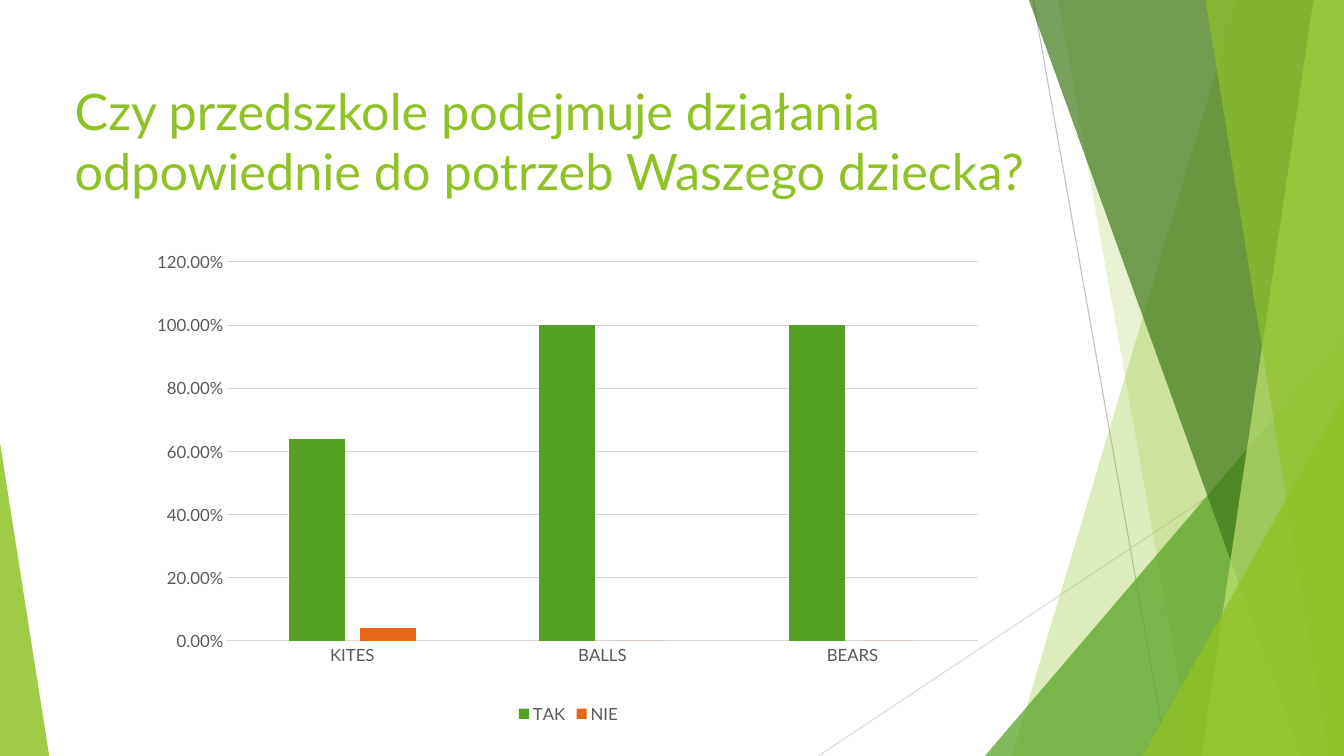
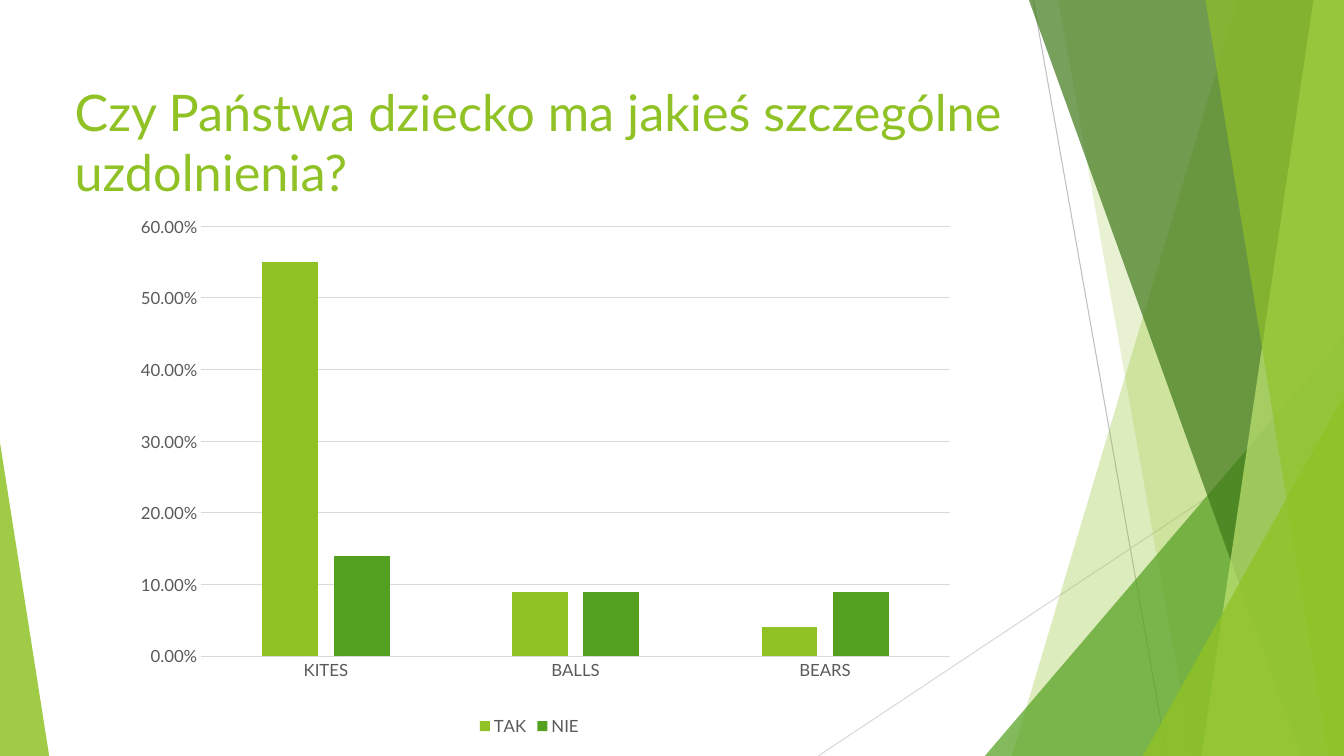
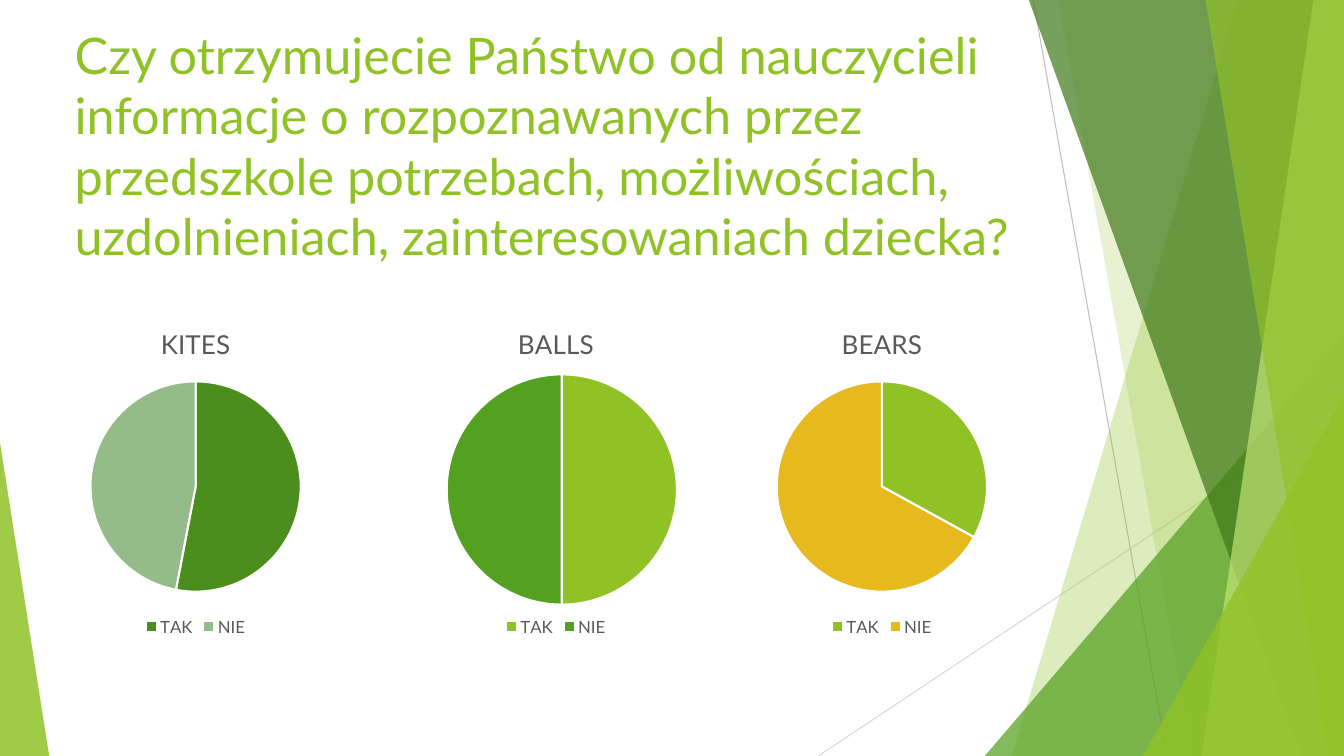
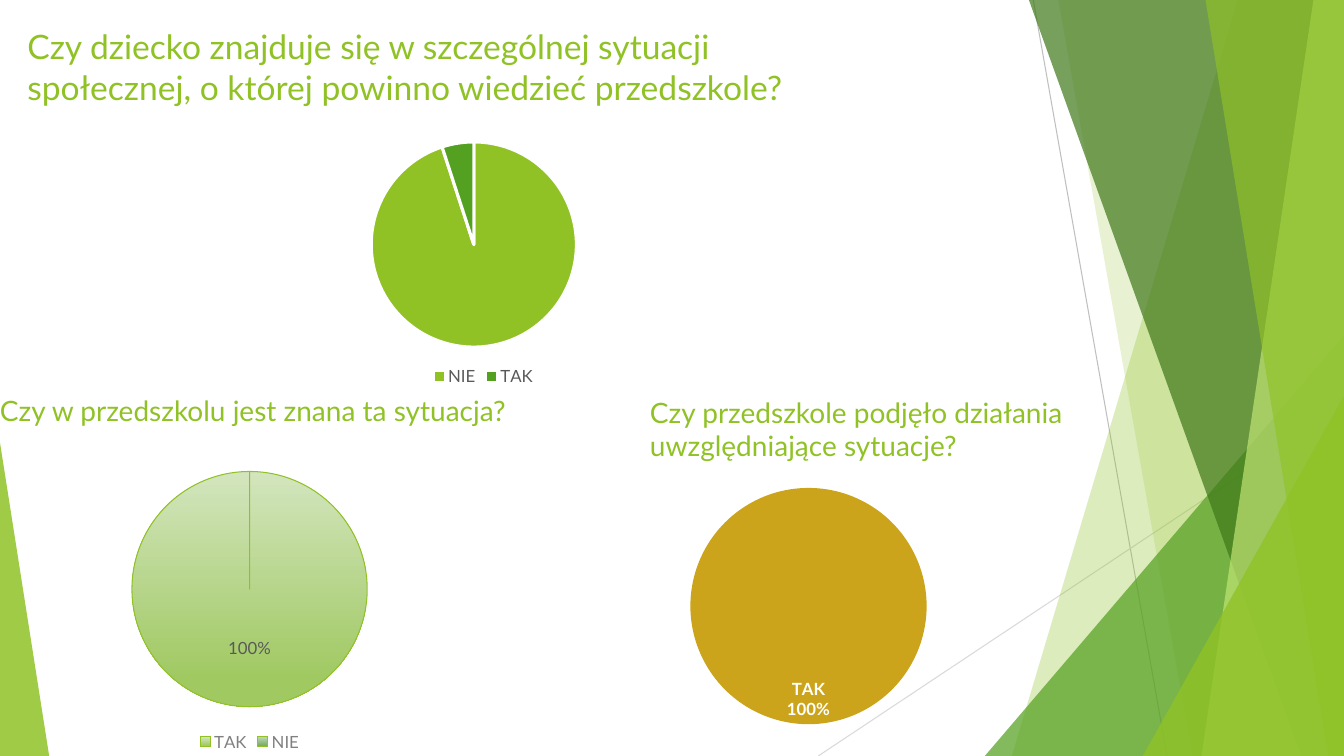
from dataclasses import dataclass
from typing import Optional, Union

import lxml.etree
import pptx
import pptx.chart.chart
import pptx.chart.data
import pptx.dml.color
import pptx.dml.fill
import pptx.enum.chart
import pptx.enum.shapes
import pptx.enum.text
import pptx.oxml.ns
import pptx.slide
import pptx.text.text
import pptx.util

Cm = pptx.util.Cm
Pt = pptx.util.Pt
qn = pptx.oxml.ns.qn

FONT = "Lato"
WIDTH, HEIGHT = 33.87, 19.05
COLORS = {
    "lime": "90C226",
    "green": "54A021",
    "forest": "3F7819",
    "pale_lime": "C0E474",
    "orange": "E76618",
    "leaf": "4B8E1D",
    "sage": "95BC88",
    "gold": "E6B91E",
    "dark_gold": "CCA41B",
    "pale_gold": "ECCC88",
    "lime_top": "D3E5BE",
    "lime_bottom": "A0C962",
    "green_top": "C0D6B9",
    "green_bottom": "76AD61",
    "text": "595959",
    "mid_gray": "808080",
    "line": "BFBFBF",
    "grid": "D9D9D9",
    "white": "FFFFFF",
}


@dataclass(frozen=True)
class Box:
    left: float
    top: float
    width: float
    height: float

    def lengths(self) -> tuple:
        return Cm(self.left), Cm(self.top), Cm(self.width), Cm(self.height)


@dataclass(frozen=True)
class Wedge:
    """Full-height band from a slanted left edge to the right slide edge."""
    top_x: float
    bottom_x: float
    color: str
    opacity: int


@dataclass(frozen=True)
class Peak:
    """Triangle whose apex sits at the given share of its width."""
    box: Box
    apex: float
    color: str
    opacity: int


@dataclass(frozen=True)
class Ray:
    x1: float
    y1: float
    x2: float
    y2: float
    color: str


@dataclass(frozen=True)
class Columns:
    title: str
    title_box: Box
    box: Box
    plot: tuple
    series: tuple  # (name, values, colour)
    top: float
    step: float


@dataclass(frozen=True)
class Pie:
    box: Box
    cats: tuple
    values: tuple
    fills: tuple  # a colour, or a (top, bottom) pair for a gradient
    name: str = "Series 1"
    title: bool = False
    plot: Optional[tuple] = None
    edge: Optional[str] = "white"
    edge_pt: float = 1.5
    legend: Optional[str] = "text"
    label: Optional[str] = None
    label_cat: bool = False


# Shared decoration, back to front
DECOR: tuple = (
    Ray(26.04, 0, 29.41, HEIGHT, "line"),
    Ray(WIDTH, 10.24, 20.62, HEIGHT, "grid"),
    Wedge(31.19, 25.5, "lime", 30),
    Wedge(26.67, 30.05, "lime", 20),
    Peak(Box(24.82, 8.46, 9.05, 10.59), 1, "green", 72),
    Wedge(25.93, 32.79, "forest", 70),
    Wedge(33.1, 30.28, "pale_lime", 70),
    Wedge(30.38, 33.48, "lime", 65),
    Peak(Box(28.8, 9.98, 5.07, 9.07), 1, "lime", 80),
    Peak(Box(0, 11.15, 1.24, 7.9), 0, "lime", 85),
)

# Slide content
GROUPS = ("KITES", "BALLS", "BEARS")
YES_NO = ("TAK", "NIE")

COLUMN_SLIDES = (
    Columns(
        "Czy przedszkole podejmuje działania odpowiednie do potrzeb Waszego dziecka?",
        Box(1.88, 1.7, 24.89, 3.66), Box(3.58, 5.44, 21.49, 12.9),
        (0.1, 0.09, 0.88, 0.74),
        (("TAK", (0.64, 1, 1), "green"), ("NIE", (0.04, 0, 0), "orange")),
        1.2, 0.2),
    Columns(
        "Czy Państwa dziecko ma jakieś szczególne uzdolnienia?",
        Box(1.88, 1.7, 24.56, 3.73), Box(2.74, 5.44, 21.21, 13.21),
        (0.11, 0.02, 0.89, 0.82),
        (("TAK", (0.55, 0.09, 0.04), "lime"), ("NIE", (0.14, 0.09, 0.09), "green")),
        0.6, 0.1),
)

GROUP_PIES = (
    Pie(Box(0.28, 7.77, 9.3, 8.38), YES_NO, (53, 47), ("leaf", "sage"), "KITES", True),
    Pie(Box(10.29, 7.77, 7.44, 8.38), YES_NO, (50, 50), ("lime", "green"), "BALLS", True,
        plot=(0.13, 0.19, 0.78, 0.71)),
    Pie(Box(17.73, 7.77, 8.99, 8.38), YES_NO, (33, 67), ("lime", "gold"), "BEARS", True),
)

SITUATION_PIES = (
    Pie(Box(7.32, 2.11, 9.73, 7.72), ("NIE", "TAK"), (95, 5), ("lime", "green"),
        plot=(0.01, 0.19, 0.93, 0.67), edge_pt=2.25),
    Pie(Box(2.57, 11.53, 7.44, 7.52), YES_NO, (100, 0),
        (("lime_top", "lime_bottom"), ("green_top", "green_bottom")),
        edge="lime", edge_pt=0.75, legend="mid_gray", label="text"),
    Pie(Box(16.76, 11.1, 7.09, 7.52), YES_NO, (100, 0), ("dark_gold", "pale_gold"),
        plot=(0.09, 0.16, 0.84, 0.89), edge=None, legend=None,
        label="white", label_cat=True),
)


def rgb(name: str) -> pptx.dml.color.RGBColor:
    return pptx.dml.color.RGBColor.from_string(COLORS[name])


def set_font(font: pptx.text.text.Font, size: float, color: str) -> None:
    font.name = FONT
    font.size = Pt(size)
    font.color.rgb = rgb(color)


def set_fill(fill: pptx.dml.fill.FillFormat, color: str) -> None:
    fill.solid()
    fill.fore_color.rgb = rgb(color)


# Decoration
def draw_decor(slide: pptx.slide.Slide, item: Union[Ray, Wedge, Peak]):
    if isinstance(item, Ray):
        cn = slide.shapes.add_connector(
            pptx.enum.shapes.MSO_CONNECTOR.STRAIGHT,
            Cm(item.x1), Cm(item.y1), Cm(item.x2), Cm(item.y2))
        cn.line.color.rgb = rgb(item.color)
        cn.line.width = Pt(0.75)
        lxml.etree.SubElement(cn.element.spPr, qn("a:effectLst"))
        return cn
    if isinstance(item, Wedge):
        builder = slide.shapes.build_freeform(Cm(item.top_x), 0)
        builder.add_line_segments([
            (Cm(WIDTH), 0), (Cm(WIDTH), Cm(HEIGHT)), (Cm(item.bottom_x), Cm(HEIGHT))])
        sp = builder.convert_to_shape()
    else:
        sp = slide.shapes.add_shape(
            pptx.enum.shapes.MSO_SHAPE.ISOSCELES_TRIANGLE, *item.box.lengths())
        sp.adjustments[0] = item.apex
    sp.shadow.inherit = False
    sp.line.fill.background()
    set_fill(sp.fill, item.color)
    clr = sp.element.xpath("./p:spPr/a:solidFill/a:srgbClr")[0]
    lxml.etree.SubElement(clr, qn("a:alpha")).set("val", str(item.opacity * 1000))
    return sp


def decorate_layout(layout: pptx.slide.SlideLayout, slide: pptx.slide.Slide) -> None:
    """Draw the decoration once and move it to the layout, behind its placeholders."""
    for i, item in enumerate(DECOR):
        layout.shapes.element.insert(2 + i, draw_decor(slide, item).element)


# Text
def set_title(slide: pptx.slide.Slide, text: str, box: Box, size: float = 36) -> None:
    sp = slide.shapes.title
    sp.left, sp.top, sp.width, sp.height = box.lengths()
    tf = sp.text_frame
    tf.margin_left = tf.margin_right = tf.margin_top = tf.margin_bottom = 0
    tf.auto_size = pptx.enum.text.MSO_AUTO_SIZE.NONE
    tf.vertical_anchor = pptx.enum.text.MSO_ANCHOR.MIDDLE
    write(tf, text, size)


def write(tf: pptx.text.text.TextFrame, text: str, size: float) -> None:
    tf.word_wrap = True
    p = tf.paragraphs[0]
    p.text = text
    p.alignment = pptx.enum.text.PP_ALIGN.LEFT
    set_font(p.font, size, "lime")


def add_question(slide: pptx.slide.Slide, text: str, box: Box, inset: bool) -> None:
    tf = slide.shapes.add_textbox(*box.lengths()).text_frame
    if not inset:
        tf.margin_left = tf.margin_right = tf.margin_top = tf.margin_bottom = 0
    write(tf, text, 20)


# Charts
def set_plot_layout(chart: pptx.chart.chart.Chart, plot: tuple) -> None:
    area = chart.element.xpath("c:chart/c:plotArea")[0]
    for old in area.findall(qn("c:layout")):
        area.remove(old)
    layout = lxml.etree.Element(qn("c:layout"))
    manual = lxml.etree.SubElement(layout, qn("c:manualLayout"))
    settings = [("layoutTarget", "inner"), ("xMode", "edge"), ("yMode", "edge"),
                *zip("xywh", plot)]
    for tag, val in settings:
        lxml.etree.SubElement(manual, qn(f"c:{tag}")).set("val", str(val))
    area.insert(0, layout)


def add_chart(slide: pptx.slide.Slide, kind: pptx.enum.chart.XL_CHART_TYPE, box: Box,
              cats: tuple, series: list, plot: Optional[tuple],
              legend: Optional[str], number_format: str) -> pptx.chart.chart.Chart:
    data = pptx.chart.data.CategoryChartData(number_format=number_format)
    data.categories = cats
    for name, values in series:
        data.add_series(name, values)
    chart = slide.shapes.add_chart(kind, *box.lengths(), data).chart
    set_font(chart.font, 12, "text")
    chart.has_title = False
    chart.has_legend = legend is not None
    if legend:
        chart.legend.position = pptx.enum.chart.XL_LEGEND_POSITION.BOTTOM
        chart.legend.include_in_layout = False
        set_font(chart.legend.font, 12, legend)
    if plot:
        set_plot_layout(chart, plot)
    # Transparent chart area without a frame
    sp_pr = lxml.etree.Element(qn("c:spPr"))
    lxml.etree.SubElement(sp_pr, qn("a:noFill"))
    lxml.etree.SubElement(lxml.etree.SubElement(sp_pr, qn("a:ln")), qn("a:noFill"))
    chart.element.xpath("c:chart")[0].addnext(sp_pr)
    return chart


def add_columns(slide: pptx.slide.Slide, spec: Columns) -> None:
    chart = add_chart(
        slide, pptx.enum.chart.XL_CHART_TYPE.COLUMN_CLUSTERED, spec.box, GROUPS,
        [(name, values) for name, values, _ in spec.series], spec.plot, "text", "0%")
    plot = chart.plots[0]
    plot.vary_by_categories = False
    plot.gap_width, plot.overlap = 219, -27
    for ser, (_, _, color) in zip(plot.series, spec.series):
        set_fill(ser.format.fill, color)

    for axis in (chart.category_axis, chart.value_axis):
        axis.major_tick_mark = axis.minor_tick_mark = pptx.enum.chart.XL_TICK_MARK.NONE
        set_font(axis.tick_labels.font, 12, "text")
    val_axis = chart.value_axis
    val_axis.minimum_scale, val_axis.maximum_scale = 0, spec.top
    val_axis.major_unit = spec.step
    val_axis.tick_labels.number_format = "0.00%"
    val_axis.tick_labels.number_format_is_linked = False
    val_axis.format.line.fill.background()
    for line in (chart.category_axis.format.line, val_axis.major_gridlines.format.line):
        line.color.rgb = rgb("grid")
        line.width = Pt(0.75)


def add_pie(slide: pptx.slide.Slide, pie: Pie) -> None:
    chart = add_chart(slide, pptx.enum.chart.XL_CHART_TYPE.PIE, pie.box, pie.cats,
                      [(pie.name, pie.values)], pie.plot, pie.legend, "General")
    if pie.title:
        tf = chart.chart_title.text_frame
        tf.text = pie.name
        set_font(tf.paragraphs[0].font, 18.6, "text")
        tf.paragraphs[0].font.bold = False
    plot = chart.plots[0]
    plot.vary_by_categories = True
    ser = plot.series[0]
    for i, color in enumerate(pie.fills):
        fmt = ser.points[i].format
        if isinstance(color, tuple):
            fmt.fill.gradient()
            fmt.fill.gradient_angle = 270
            for stop, name, pos in zip(fmt.fill.gradient_stops, color, (0, 0.88)):
                stop.color.rgb = rgb(name)
                stop.position = pos
        else:
            set_fill(fmt.fill, color)
        if pie.edge:
            fmt.line.color.rgb = rgb(pie.edge)
            fmt.line.width = Pt(pie.edge_pt)
        else:
            fmt.line.fill.background()
    if pie.label:
        label_pie(chart, pie)


def label_pie(chart: pptx.chart.chart.Chart, pie: Pie) -> None:
    labels = chart.plots[0].series[0].data_labels
    position = pptx.enum.chart.XL_LABEL_POSITION
    labels.show_value = False
    labels.show_percentage = True
    labels.show_category_name = pie.label_cat
    labels.number_format = "0%"
    labels.number_format_is_linked = False
    labels.position = position.INSIDE_END if pie.label_cat else position.CENTER
    set_font(labels.font, 12, pie.label)
    labels.font.bold = pie.label_cat
    d_lbls = chart.element.xpath("//c:ser/c:dLbls")[0]
    separator = lxml.etree.Element(qn("c:separator"))
    separator.text = "\n"
    d_lbls.find(qn("c:showBubbleSize")).addnext(separator)
    # Empty slices carry no label
    empty = [i for i, value in enumerate(pie.values) if value == 0]
    for n, i in enumerate(empty):
        d_lbl = lxml.etree.Element(qn("c:dLbl"))
        lxml.etree.SubElement(d_lbl, qn("c:idx")).set("val", str(i))
        lxml.etree.SubElement(d_lbl, qn("c:delete")).set("val", "1")
        d_lbls.insert(n, d_lbl)


def main() -> None:
    prs = pptx.Presentation()
    prs.slide_width, prs.slide_height = Cm(WIDTH), Cm(HEIGHT)
    layout = prs.slide_layouts[5]

    # Column chart slides
    for spec in COLUMN_SLIDES:
        slide = prs.slides.add_slide(layout)
        set_title(slide, spec.title, spec.title_box)
        add_columns(slide, spec)
    decorate_layout(layout, slide)

    # One pie per group
    slide = prs.slides.add_slide(layout)
    set_title(slide, "Czy otrzymujecie Państwo od nauczycieli informacje o rozpoznawanych "
                     "przez przedszkole potrzebach, możliwościach, uzdolnieniach, "
                     "zainteresowaniach dziecka?", Box(1.88, 1.7, 25.37, 3.91))
    for pie in GROUP_PIES:
        add_pie(slide, pie)

    # Three questions about the child's situation
    slide = prs.slides.add_slide(layout)
    set_title(slide, "Czy dziecko znajduje się w szczególnej sytuacji społecznej, "
                     "o której powinno wiedzieć przedszkole?",
              Box(0.69, 0.38, 19.58, 2.59), 24)
    add_question(slide, "Czy w przedszkolu jest znana ta sytuacja?",
                 Box(0, 9.91, 18.03, 2.59), inset=False)
    add_question(slide, "Czy przedszkole podjęło działania uwzględniające sytuacje?",
                 Box(16.13, 9.83, 12.45, 1.96), inset=True)
    for pie in SITUATION_PIES:
        add_pie(slide, pie)

    prs.save("out.pptx")


if __name__ == "__main__":
    main()
